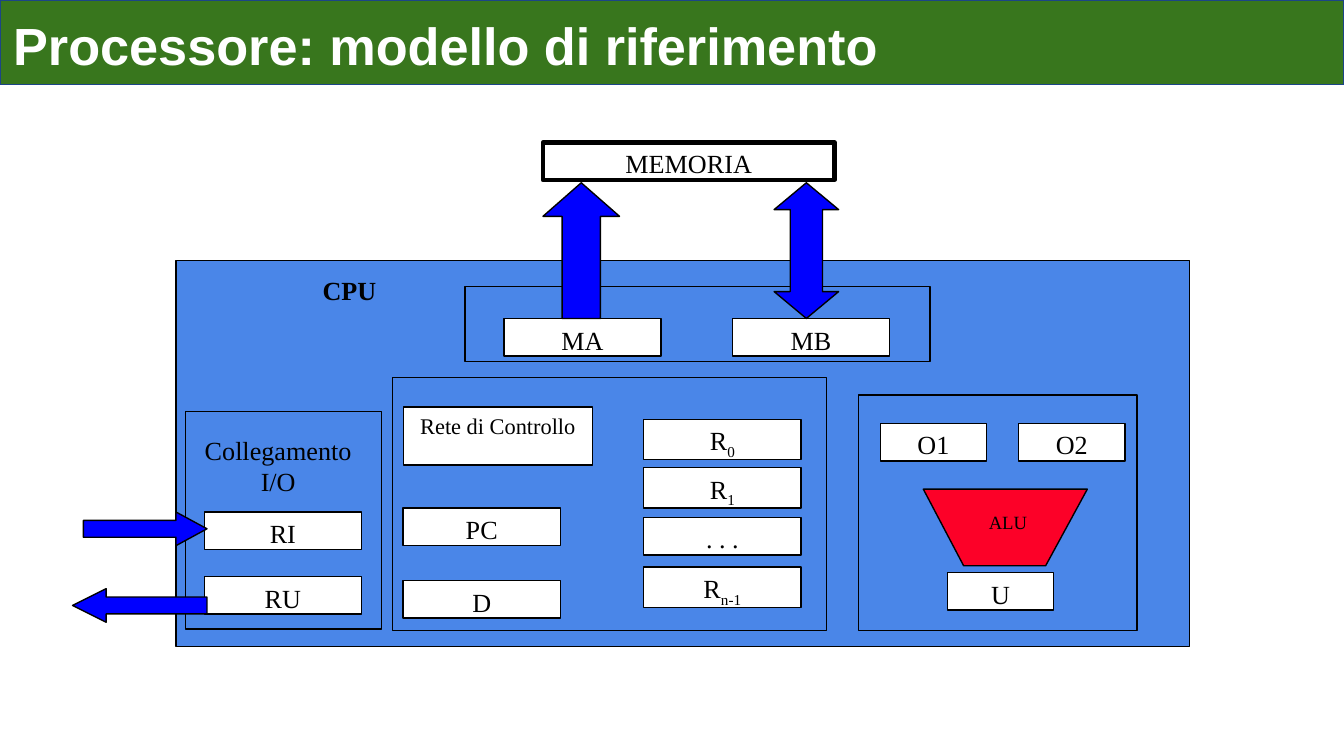
import pptx
import pptx.dml.color
import pptx.enum.shapes
import pptx.enum.text
import pptx.util

PX = 9144
SHAPE = pptx.enum.shapes.MSO_SHAPE
ALIGN = pptx.enum.text.PP_ALIGN
ANCHOR = pptx.enum.text.MSO_ANCHOR


def px(n):
    """Turn px into EMU."""
    return pptx.util.Emu(n * PX)


def color(hex_code):
    """Turn a hex string into a colour."""
    return pptx.dml.color.RGBColor.from_string(hex_code)


def style(sp, fill=None, line="000000", width=0.75):
    """Set fill and outline, and drop the shadow."""
    sp.shadow.inherit = False
    if fill:
        sp.fill.solid()
        sp.fill.fore_color.rgb = color(fill)
    else:
        sp.fill.background()
    if line:
        sp.line.color.rgb = color(line)
        sp.line.width = pptx.util.Pt(width)
    else:
        sp.line.fill.background()
    return sp


def write(sp, text, sub="", size=14, font="Times New Roman", ink="000000",
          bold=False, align=ALIGN.CENTER, anchor=ANCHOR.TOP, inset=(9, 4)):
    """Write text, with an optional subscript, into a shape."""
    tf = sp.text_frame
    tf.word_wrap = True
    tf.vertical_anchor = anchor
    tf.margin_left = tf.margin_right = px(inset[0])
    tf.margin_top = tf.margin_bottom = px(inset[1])
    p = tf.paragraphs[0]
    p.alignment = align
    for part in filter(None, (text, sub)):
        r = p.add_run()
        r.text = part
        r.font.name = font
        r.font.size = pptx.util.Pt(size)
        r.font.bold = bold
        r.font.color.rgb = color(ink)
    if sub:
        r._r.get_or_add_rPr().set("baseline", "-25000")


def rect(s, x, y, w, h, **look):
    """Add a styled rectangle."""
    sp = s.shapes.add_shape(SHAPE.RECTANGLE, px(x), px(y), px(w), px(h))
    return style(sp, **look)


def polygon(s, x, y, points, **look):
    """Add a closed outline through points relative to x, y."""
    start, *rest = [(px(x + dx), px(y + dy)) for dx, dy in points]
    fb = s.shapes.build_freeform(*start)
    fb.add_line_segments(rest)
    return style(fb.convert_to_shape(), **look)


def register(s, x, y, text, w=117, h=28, **fmt):
    """Add a white labelled box."""
    write(rect(s, x, y, w, h, fill="FFFFFF"), text, **fmt)


def label(s, x, y, w, h, text, **fmt):
    """Add a text box."""
    write(s.shapes.add_textbox(px(x), px(y), px(w), px(h)), text, **fmt)


def arrow(s, kind, x, y, w, h, head):
    """Add a blue block arrow whose shaft is half its breadth."""
    sp = style(s.shapes.add_shape(kind, px(x), px(y), px(w), px(h)), fill="0000FF")
    sp.adjustments[0] = 0.5
    sp.adjustments[1] = head / min(w, h)


def double_arrow(s, x, y, w, h, head):
    """Add a blue vertical arrow with a head at both ends."""
    left, right = w // 4, w - w // 4
    polygon(s, x, y, (
        (0, head), (w // 2, 0), (w, head), (right, head), (right, h - head),
        (w, h - head), (w // 2, h), (0, h - head), (left, h - head),
        (left, head)), fill="0000FF")


def title_bar(s, x, y, w, h):
    """Draw the title band."""
    sp = rect(s, x, y, w, h, fill="38761D", line="1C4587")
    write(sp, "Processore: modello di riferimento", size=28, font="Arial",
          ink="FFFFFF", bold=True, align=ALIGN.LEFT, inset=(10, 10))


def cpu(s, x, y, w, h):
    """Draw the CPU background and its name."""
    rect(s, x, y, w, h, fill="4A86E8")
    label(s, x + 100, y + 6, 61, 28, "CPU", bold=True, align=ALIGN.LEFT)


def memory_link(s, x, y, w, h):
    """Draw the memory, its two registers and the arrows between them."""
    rect(s, x, y, w, h)
    write(rect(s, x + 58, y - 107, 217, 28, width=2.25), "MEMORIA")
    for dx, text in ((29, "MA"), (199, "MB")):
        register(s, x + dx, y + 24, text)
    arrow(s, SHAPE.UP_ARROW, x + 58, y - 77, 57, 101, 25)
    double_arrow(s, x + 230, y - 77, 48, 101, 20)


def control(s, x, y, w, h):
    """Draw the control network and the register file."""
    rect(s, x, y, w, h)
    register(s, x + 8, y + 22, "Rete di Controllo", w=141, h=43, size=12)
    for dy, text in ((97, "PC"), (151, "D")):
        register(s, x + 8, y + dy, text)
    bank = (("R", "0", 30), ("R", "1", 30), (". . .", "", 28), ("R", "n-1", 30))
    for i, (text, sub, height) in enumerate(bank):
        register(s, x + 187, y + 31 + round(36.5 * i), text, sub=sub, h=height)


def alu(s, x, y, w, h):
    """Draw the arithmetic unit with its operands and result."""
    rect(s, x, y, w, h)
    for dx, dy, text in ((16, 21, "O1"), (119, 21, "O2"), (66, 132, "U")):
        register(s, x + dx, y + dy, text, w=79)
    polygon(s, x + 48, y + 70, ((0, 0), (122, 0), (91, 57), (30, 57)), fill="FC0128")
    write(rect(s, x + 79, y + 82, 64, 23, fill="FC0128", line=None), "ALU", size=10)


def io_link(s, x, y, w, h):
    """Draw the input and output registers with their arrows."""
    rect(s, x, y, w, h)
    label(s, x, y + 13, 138, 48, "Collegamento I/O")
    for dy, text in ((75, "RI"), (123, "RU")):
        register(s, x + 14, y + dy, text)
    arrow(s, SHAPE.RIGHT_ARROW, x - 76, y + 75, 92, 25, 23)
    arrow(s, SHAPE.LEFT_ARROW, x - 84, y + 132, 100, 25, 25)


def main():
    """Build and save the slide."""
    prs = pptx.Presentation()
    prs.slide_width = px(1000)
    prs.slide_height = prs.slide_width * 9 // 16
    s = prs.slides.add_slide(prs.slide_layouts[6])
    cpu(s, 131, 194, 754, 287)
    memory_link(s, 346, 213, 346, 56)
    control(s, 292, 281, 323, 188)
    alu(s, 639, 294, 207, 175)
    io_link(s, 138, 306, 146, 162)
    title_bar(s, 0, 0, 1000, 63)
    prs.save("out.pptx")


if __name__ == "__main__":
    main()
